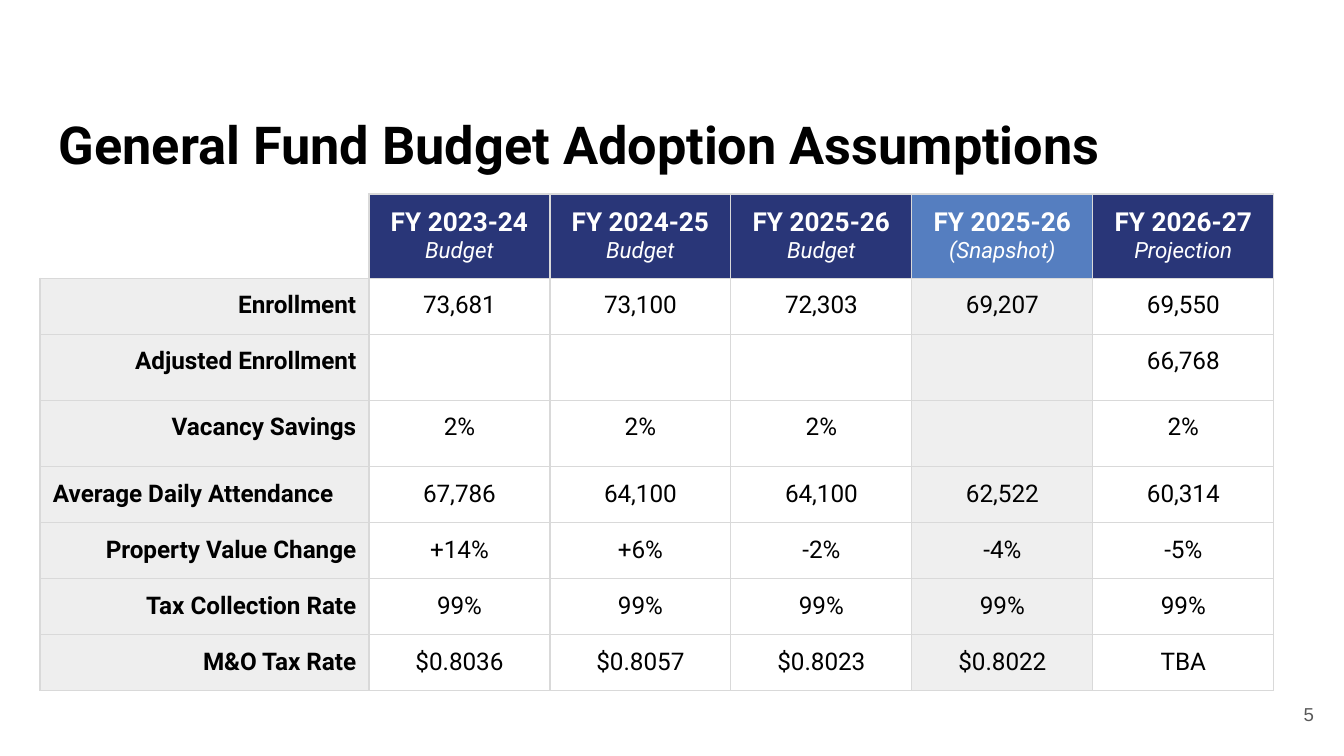
from lxml.etree import SubElement
from pptx import Presentation
from pptx.dml.color import RGBColor
from pptx.enum.text import MSO_ANCHOR, PP_ALIGN
from pptx.oxml.ns import qn
from pptx.util import Emu, Pt

PX = 914400 / 134.4
BLACK = RGBColor(0x00, 0x00, 0x00)
WHITE = RGBColor(0xFF, 0xFF, 0xFF)
NAVY = RGBColor(0x29, 0x36, 0x78)
BLUE = RGBColor(0x55, 0x7E, 0xC0)
LABEL_GREY = RGBColor(0xEE, 0xEE, 0xEE)
SNAPSHOT_GREY = RGBColor(0xEF, 0xEF, 0xEF)
BORDER_GREY = RGBColor(0xD9, 0xD9, 0xD9)
NUMBER_GREY = RGBColor(0x59, 0x59, 0x59)

TITLE = {"name": "Roboto", "size": Pt(28), "bold": True}
YEAR = {"name": "Roboto", "size": Pt(14), "bold": True}
STAGE = {"name": "Roboto", "size": Pt(12), "bold": False, "italic": True}
LABEL = {"name": "Roboto", "size": Pt(13), "bold": True}
VALUE = {"name": "Roboto", "size": Pt(13), "bold": False}
NUMBER = {"name": "Arial", "size": Pt(10)}

HEADERS = [
    ("FY 2023-24", "Budget"),
    ("FY 2024-25", "Budget"),
    ("FY 2025-26", "Budget"),
    ("FY 2025-26", "(Snapshot)"),
    ("FY 2026-27", "Projection"),
]
ROWS = [
    ("Enrollment", "73,681", "73,100", "72,303", "69,207", "69,550"),
    ("Adjusted Enrollment", "", "", "", "", "66,768"),
    ("Vacancy Savings", "2%", "2%", "2%", "", "2%"),
    ("Average Daily Attendance", "67,786", "64,100", "64,100", "62,522", "60,314"),
    ("Property Value Change", "+14%", "+6%", "-2%", "-4%", "-5%"),
    ("Tax Collection Rate", "99%", "99%", "99%", "99%", "99%"),
    ("M&O Tax Rate", "$0.8036", "$0.8057", "$0.8023", "$0.8022", "TBA"),
]
COLUMN_WIDTHS = [329] + [181] * 5
ROW_HEIGHTS = [84, 56, 64, 64, 56, 56, 56, 56]
SNAPSHOT_COLUMN = 4


def px(*lengths):
    return [Emu(round(length * PX)) for length in lengths]


def write(frame, lines, color, align, margin_top=13):
    frame.word_wrap = True
    for side in ("left", "top", "right", "bottom"):
        setattr(frame, f"margin_{side}", px(margin_top if side == "top" else 13)[0])
    for index, (text, style) in enumerate(lines):
        para = frame.add_paragraph() if index else frame.paragraphs[0]
        para.alignment = align
        span = para.add_run()
        span.text = text
        span.font.color.rgb = color
        for key, value in style.items():
            setattr(span.font, key, value)


deck = Presentation()
deck.slide_width, deck.slide_height = px(1344, 756)
page = deck.slides.add_slide(deck.slide_layouts[6])

title_box = page.shapes.add_textbox(*px(46, 94, 1253, 85))
write(title_box.text_frame, [("General Fund Budget Adoption Assumptions", TITLE)],
      BLACK, PP_ALIGN.LEFT, margin_top=18)

table = page.shapes.add_table(
    len(ROW_HEIGHTS), len(COLUMN_WIDTHS),
    *px(40, 194, sum(COLUMN_WIDTHS), sum(ROW_HEIGHTS))).table
table.first_row = False
table.horz_banding = False
for column, width in zip(table.columns, px(*COLUMN_WIDTHS)):
    column.width = width
for row, height in zip(table.rows, px(*ROW_HEIGHTS)):
    row.height = height

for r in range(len(ROW_HEIGHTS)):
    for c in range(len(COLUMN_WIDTHS)):
        cell = table.cell(r, c)
        corner = r == 0 and c == 0
        properties = cell._tc.get_or_add_tcPr()
        for edge in ("R", "B") if corner else ("L", "R", "T", "B"):
            line = SubElement(properties, qn(f"a:ln{edge}"), w=str(Pt(0.75)))
            paint = SubElement(line, qn("a:solidFill"))
            SubElement(paint, qn("a:srgbClr"), val=str(BORDER_GREY))

        fill, color, align = None, BLACK, PP_ALIGN.CENTER
        if corner:
            lines = []
        elif r == 0:
            lines = list(zip(HEADERS[c - 1], (YEAR, STAGE)))
            fill, color = BLUE if c == SNAPSHOT_COLUMN else NAVY, WHITE
        elif c == 0:
            lines = [(ROWS[r - 1][0], LABEL)]
            fill = LABEL_GREY
            align = PP_ALIGN.LEFT if ROWS[r - 1][0].startswith("Average") else PP_ALIGN.RIGHT
        else:
            lines = [(ROWS[r - 1][c], VALUE)] if ROWS[r - 1][c] else []
            fill = SNAPSHOT_GREY if c == SNAPSHOT_COLUMN else None

        if fill is None:
            cell.fill.background()
        else:
            cell.fill.solid()
            cell.fill.fore_color.rgb = fill
        for side in ("left", "top", "right", "bottom"):
            setattr(cell, f"margin_{side}", px(13)[0])
        for index, (text, style) in enumerate(lines):
            frame = cell.text_frame
            para = frame.add_paragraph() if index else frame.paragraphs[0]
            para.alignment = align
            span = para.add_run()
            span.text = text
            span.font.color.rgb = color
            for key, value in style.items():
                setattr(span.font, key, value)

number_box = page.shapes.add_textbox(*px(1246, 685, 81, 58))
number_box.text_frame.vertical_anchor = MSO_ANCHOR.MIDDLE
write(number_box.text_frame, [("5", NUMBER)], NUMBER_GREY, PP_ALIGN.RIGHT)

deck.save("out.pptx")
